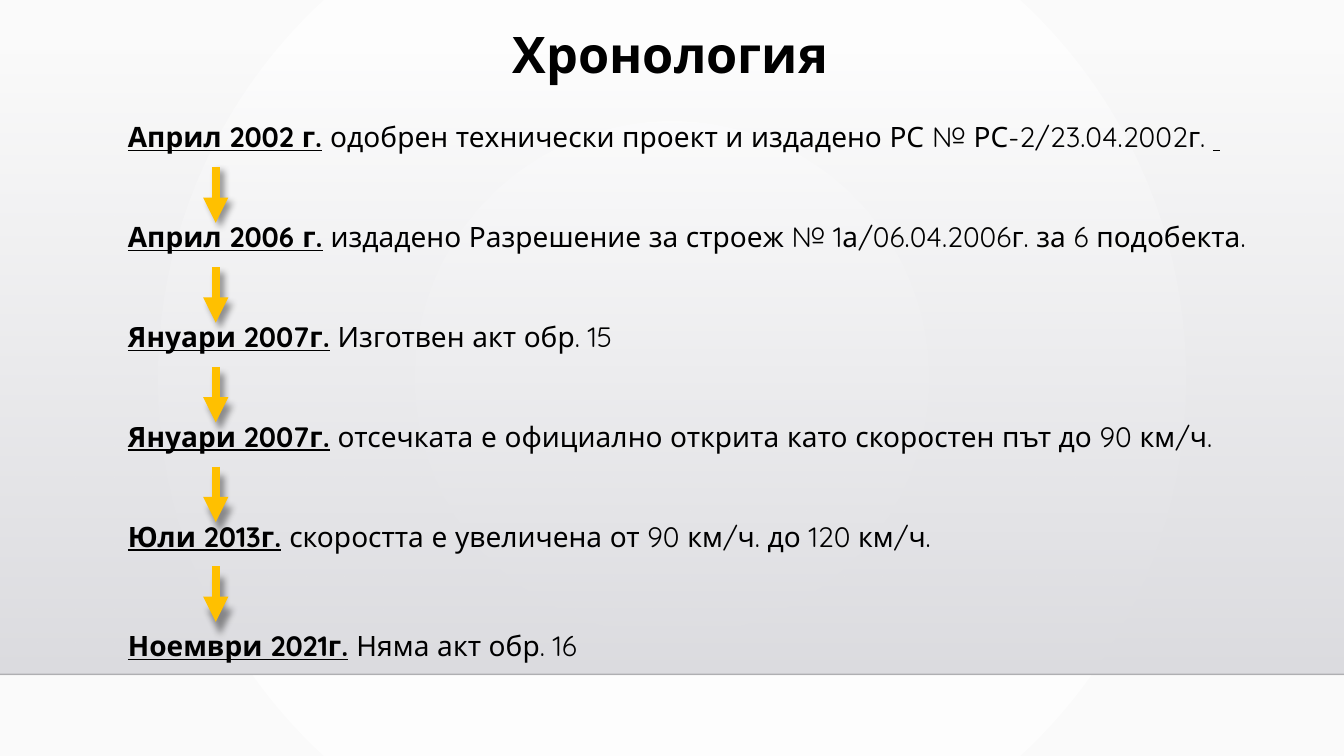
import pptx
import pptx.dml.color
import pptx.enum.shapes
import pptx.enum.text
import pptx.oxml
import pptx.oxml.ns
import pptx.util
from dataclasses import dataclass
from lxml import etree

Inches = pptx.util.Inches
qn = pptx.oxml.ns.qn


@dataclass(frozen=True)
class Theme:
    font: str = "Quicksand"
    title_size: int = 36
    body_size: int = 20
    text: str = "000000"
    background: tuple = ("FFFFFF", "FAFAFA")
    panel: tuple = ("DCDCE0", "DEDEE2")
    rule: str = "000001"
    arrow: str = "FFC000"


THEME = Theme()

EVENTS = [
    ("Април 2002 г.", "одобрен технически проект и издадено РС № РС-2/23.04.2002г. "),
    ("Април 2006 г.", "издадено Разрешение за строеж № 1а/06.04.2006г. за 6 подобекта."),
    ("Януари 2007г.", "Изготвен акт обр. 15"),
    ("Януари 2007г.", "отсечката е официално открита като скоростен път до 90 км/ч."),
    ("Юли 2013г.", "скоростта е увеличена от 90 км/ч. до 120 км/ч."),
    ("Ноември 2021г.", "Няма акт обр. 16"),
]


def rgb(value):
    return pptx.dml.color.RGBColor.from_string(value)


def set_gradient(fill, colors):
    fill.gradient()
    for stop, color, position in zip(fill.gradient_stops, colors, (0, 1)):
        stop.color.rgb = rgb(color)
        stop.position = position


def set_alpha(color_element, percent):
    etree.SubElement(color_element, qn("a:alpha")).set("val", str(percent * 1000))


def add_line(slide, start, end, color, width):
    line = slide.shapes.add_connector(
        pptx.enum.shapes.MSO_CONNECTOR.STRAIGHT,
        *(Inches(value) for value in start + end))
    line.line.color.rgb = rgb(color)
    line.line.width = pptx.util.Pt(width)
    effects = etree.SubElement(line._element.spPr, qn("a:effectLst"))
    return line, effects


def add_backdrop(slide, left, top, width, height):
    background = slide.background.fill
    set_gradient(background, THEME.background)
    gradient = slide._element.find(".//" + qn("p:bgPr")).find(qn("a:gradFill"))
    circle = pptx.oxml.parse_xml(
        '<a:path xmlns:a="http://schemas.openxmlformats.org/drawingml/2006/main" '
        'path="circle"><a:fillToRect l="50000" t="50000" r="50000" b="50000"/></a:path>')
    gradient.replace(gradient.find(qn("a:lin")), circle)

    panel = slide.shapes.add_shape(
        pptx.enum.shapes.MSO_SHAPE.RECTANGLE,
        Inches(left), Inches(top), Inches(width), Inches(height))
    panel.shadow.inherit = False
    panel.line.fill.background()
    set_gradient(panel.fill, THEME.panel)
    panel.fill.gradient_angle = 270
    set_alpha(panel._element.spPr.find(".//" + qn("a:srgbClr")), 0)

    bottom = top + height
    rule, _ = add_line(slide, (left, bottom), (left + width, bottom), THEME.rule, 1)
    set_alpha(rule._element.spPr.find(".//" + qn("a:srgbClr")), 20)


def add_text(slide, left, top, width, height, size):
    box = slide.shapes.add_textbox(
        Inches(left), Inches(top), Inches(width), Inches(height))
    box.text_frame.word_wrap = True
    paragraph = box.text_frame.paragraphs[0]
    paragraph.font.name = THEME.font
    paragraph.font.size = pptx.util.Pt(size)
    paragraph.font.color.rgb = rgb(THEME.text)
    return box.text_frame, paragraph


def add_title(slide, left, top, width, height):
    frame, paragraph = add_text(slide, left, top, width, height, THEME.title_size)
    frame.vertical_anchor = pptx.enum.text.MSO_ANCHOR.MIDDLE
    paragraph.alignment = pptx.enum.text.PP_ALIGN.CENTER
    paragraph.line_spacing = 1.2
    paragraph.font.bold = True
    paragraph.add_run().text = "Хронология"


def add_event(slide, left, top, width, date, description):
    frame, paragraph = add_text(slide, left, top, width, 0.44, THEME.body_size)
    frame.auto_size = pptx.enum.text.MSO_AUTO_SIZE.SHAPE_TO_FIT_TEXT
    parts = [(date, True, True), (" ", True, False), (description, False, False)]
    if description.endswith(" "):
        parts.append((" ", False, True))
    for text, bold, underline in parts:
        run = paragraph.add_run()
        run.text = text
        run.font.bold = bold
        run.font.underline = underline


def add_arrow(slide, x, top, length):
    arrow, effects = add_line(slide, (x, top), (x, top + length), THEME.arrow, 6)
    outline = arrow._element.spPr.find(qn("a:ln"))
    etree.SubElement(outline, qn("a:tailEnd")).set("type", "triangle")
    shadow = etree.SubElement(effects, qn("a:outerShdw"), {
        "blurRad": "63500", "sx": "102000", "sy": "102000",
        "algn": "ctr", "rotWithShape": "0"})
    color = etree.SubElement(shadow, qn("a:srgbClr"), {"val": THEME.text})
    set_alpha(color, 40)


def add_timeline(slide, left, top, width, pitch, last_gap):
    last = len(EVENTS) - 1
    for index, (date, description) in enumerate(EVENTS):
        row_top = top + index * pitch + (last_gap if index == last else 0)
        add_event(slide, left, row_top, width, date, description)
        if index < last:
            add_arrow(slide, left + 0.97, row_top + 0.52, 0.55)


def main():
    presentation = pptx.Presentation()
    presentation.slide_width = Inches(13.33)
    presentation.slide_height = Inches(7.5)
    slide = presentation.slides.add_slide(presentation.slide_layouts[6])
    add_backdrop(slide, 0, 0.51, 13.33, 6.18)
    add_title(slide, 4.79, 0, 3.72, 0.93)
    add_timeline(slide, 1.17, 1.14, 11.82, 0.99, 0.1)
    presentation.save("out.pptx")


if __name__ == "__main__":
    main()
